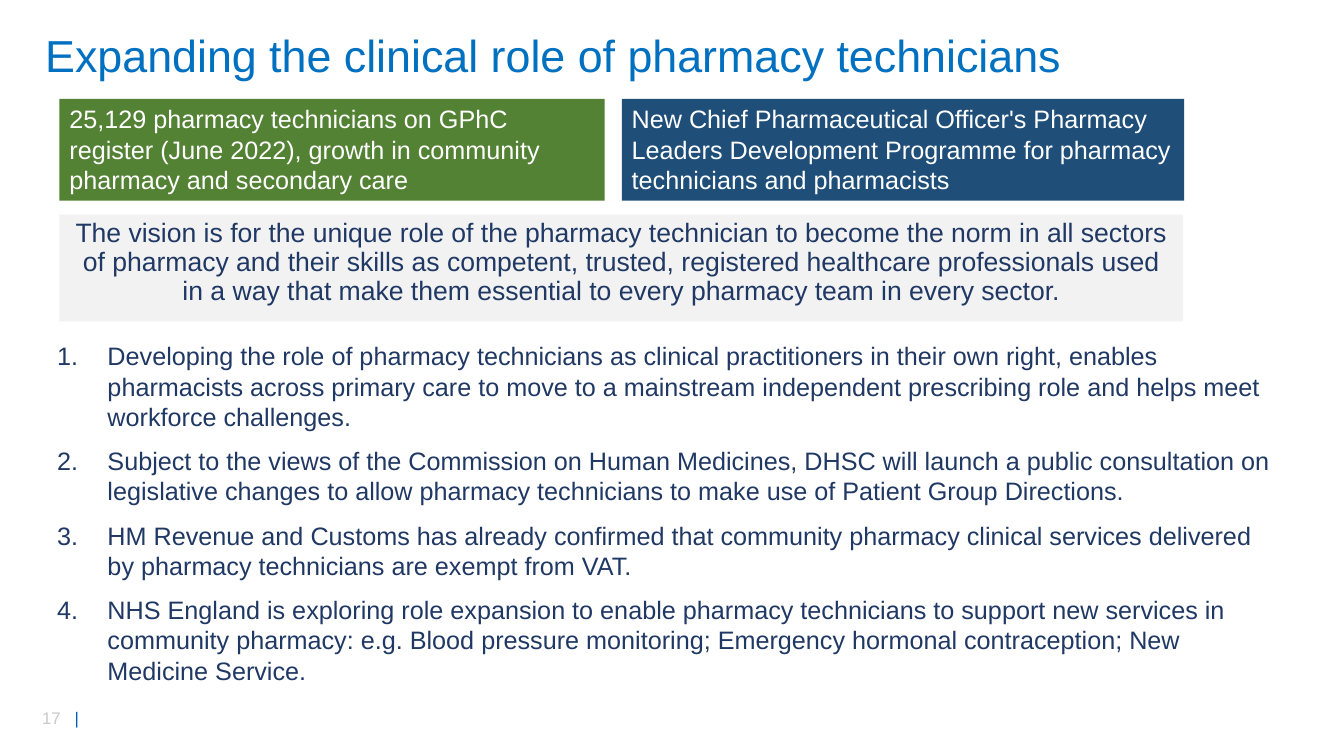
from dataclasses import dataclass

from lxml import etree
from pptx import Presentation
from pptx import util as u
from pptx.dml import color
from pptx.enum import shapes, text
from pptx.oxml import ns

FONT = "Arial"
COLOURS = {
    "title": "0070C0",
    "navy": "203864",
    "green": "548235",
    "blue": "1F4E79",
    "pale": "F2F2F2",
    "white": "FFFFFF",
    "number": "C9C9C9",
    "bar": "005EB8",
}
INDENT = u.Cm(1.27)
NUMBER_TAB = u.Cm(0.82)


@dataclass
class Block:
    """A block of text; left, top, width and height are in centimetres."""
    left: float
    top: float
    width: float
    height: float
    lines: tuple[str, ...]
    size: float
    colour: str
    fill: str | None = None
    align: text.PP_ALIGN = text.PP_ALIGN.LEFT
    anchor: text.MSO_ANCHOR = text.MSO_ANCHOR.TOP
    spacing: float = 1.0
    numbered: bool = False


TITLE = Block(0.89, 0.61, 29.57, 1.7,
              ("Expanding the clinical role of pharmacy technicians",),
              32, "title", anchor=text.MSO_ANCHOR.MIDDLE, spacing=0.9)
VISION = Block(1.5, 5.41, 28.32, 2.69,
               ("The vision is for the unique role of the pharmacy technician to become the "
                "norm in all sectors of pharmacy and their skills as competent, trusted, "
                "registered healthcare professionals used in a way that make them essential "
                "to every pharmacy team in every sector.",),
               19, "navy", "pale", align=text.PP_ALIGN.CENTER, spacing=0.9)
REGISTER = Block(1.5, 2.49, 13.74, 2.57,
                 ("25,129 pharmacy technicians on GPhC register (June 2022), growth in "
                  "community pharmacy and secondary care",),
                 18, "white", "green")
PROGRAMME = Block(15.67, 2.49, 14.17, 2.57,
                  ("New Chief Pharmaceutical Officer's Pharmacy Leaders Development Programme "
                   "for pharmacy technicians and pharmacists",),
                  18, "white", "blue")
ACTIONS = Block(1.19, 8.46, 31.27, 10.19, (
    "Developing the role of pharmacy technicians as clinical practitioners in their own right, "
    "enables pharmacists across primary care to move to a mainstream independent prescribing "
    "role and helps meet workforce challenges.",
    "Subject to the views of the Commission on Human Medicines, DHSC will launch a public "
    "consultation on legislative changes to allow pharmacy technicians to make use of Patient "
    "Group Directions.",
    "HM Revenue and Customs has already confirmed that community pharmacy clinical services "
    "delivered by pharmacy technicians are exempt from VAT.",
    "NHS England is exploring role expansion to enable pharmacy technicians to support new "
    "services in community pharmacy: e.g. Blood pressure monitoring; Emergency hormonal "
    "contraception; New Medicine Service.",
), 18, "navy", numbered=True)
PAGE_NUMBER = Block(0.81, 17.7, 1.8, 0.76, ("17\t",), 12, "number")


def colour_of(name: str) -> color.RGBColor:
    return color.RGBColor.from_string(COLOURS[name])


def style_span(span, size: float, colour: str) -> None:
    span.font.name = FONT
    span.font.size = u.Pt(size)
    span.font.color.rgb = colour_of(colour)


def number_paragraph(para) -> None:
    """Give the paragraph an automatic number and a hanging indent."""
    properties = para._p.get_or_add_pPr()
    properties.set("marL", str(int(INDENT)))
    properties.set("indent", str(-int(INDENT)))
    etree.SubElement(properties, ns.qn("a:buFont"), typeface="+mj-lt")
    etree.SubElement(properties, ns.qn("a:buAutoNum"), type="arabicPeriod")


def add_block(page, block: Block):
    place = [u.Cm(length) for length in (block.left, block.top, block.width, block.height)]
    if block.fill:
        box = page.shapes.add_shape(shapes.MSO_SHAPE.RECTANGLE, *place)
        box.shadow.inherit = False
        box.fill.solid()
        box.fill.fore_color.rgb = colour_of(block.fill)
        box.line.fill.background()
    else:
        box = page.shapes.add_textbox(*place)
    frame = box.text_frame
    frame.word_wrap = True
    frame.vertical_anchor = block.anchor
    frame.text = "\n".join(block.lines)
    for index, para in enumerate(frame.paragraphs):
        para.alignment = block.align
        para.line_spacing = block.spacing
        if index:
            para.space_before = u.Pt(10)
        if block.numbered:
            number_paragraph(para)
        for span in para.runs:
            style_span(span, block.size, block.colour)
    return box


def add_page_number(page) -> None:
    """Draw the number, then a bar at a tab stop."""
    para = add_block(page, PAGE_NUMBER).text_frame.paragraphs[0]
    tabs = etree.SubElement(para._p.get_or_add_pPr(), ns.qn("a:tabLst"))
    etree.SubElement(tabs, ns.qn("a:tab"), pos=str(int(NUMBER_TAB)), algn="l")
    bar = para.add_run()
    bar.text = "|"
    style_span(bar, PAGE_NUMBER.size, "bar")


def main() -> None:
    deck = Presentation()
    deck.slide_width, deck.slide_height = u.Cm(33.87), u.Cm(19.05)
    page = deck.slides.add_slide(deck.slide_layouts[6])
    add_page_number(page)
    for block in (TITLE, VISION, REGISTER, PROGRAMME, ACTIONS):
        add_block(page, block)
    deck.save("out.pptx")


if __name__ == "__main__":
    main()
